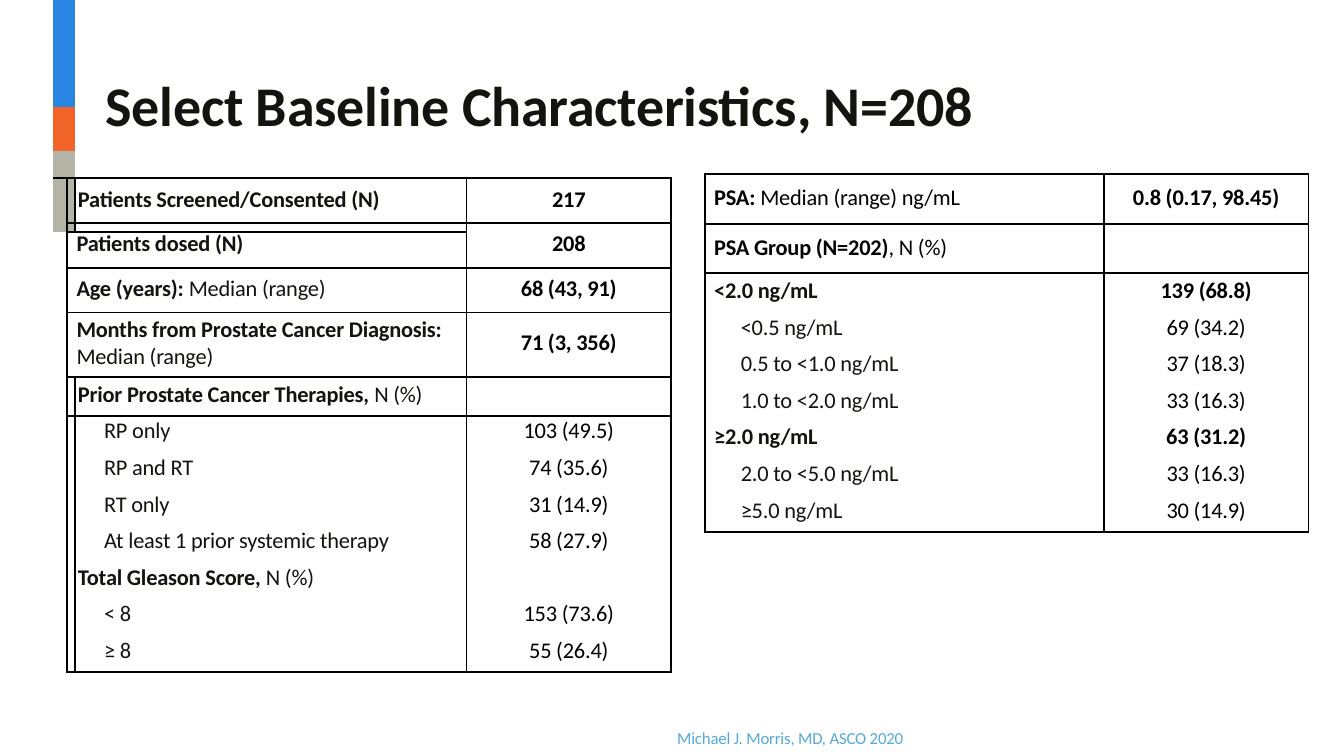
from lxml import etree
from pptx import Presentation
from pptx.dml.color import RGBColor
from pptx.enum.text import PP_ALIGN
from pptx.oxml.ns import qn
from pptx.util import Pt

CENTER = PP_ALIGN.CENTER
FONT = "Calibri"
NO_STYLE = "{2D5ABB26-0587-4C30-8999-92F81FD0307C}"
COLORS = {"ink": "131310", "black": "000000", "credit": "56A9DD",
          "blue": "2985E1", "orange": "F16429", "gray": "B3B3A6"}

HEADER_TOP, BODY_TOP = 4.1, 0.9   # top margins of the table cells
BODY_ROW = 19.6
VALUE_WIDTH = 109.6

# Label, value, top margin; ** switches bold on and off
SCREENED = ("**Patients Screened/Consented (N)**", "**217**")
DOSED = ("**Patients dosed (N)**", "**208**")
MEDIANS = [
    ("**Age (years): **Median (range)", "**68 (43, 91)**", HEADER_TOP, HEADER_TOP),
    ("**Months from Prostate Cancer Diagnosis:**\nMedian (range)",
     "**71 (3, 356)**", 1.9, 9.2),
]
HISTORY = [
    ("**Prior Prostate Cancer Therapies, **N (%)", ""),
    ("RP only", "103 (49.5)"),
    ("RP and RT", "74 (35.6)"),
    ("RT only", "31 (14.9)"),
    ("At least 1 prior systemic therapy", "58 (27.9)"),
    ("**Total Gleason Score, **N (%)", ""),
    ("< 8", "153 (73.6)"),
    ("≥ 8", "55 (26.4)"),
]
PSA = [
    ("**PSA: **Median (range) ng/mL", "**0.8 (0.17, 98.45)**"),
    ("**PSA Group (N=202)**, N (%)", ""),
    ("**<2.0 ng/mL**", "**139 (68.8)**"),
    ("<0.5 ng/mL", "69 (34.2)"),
    ("0.5 to <1.0 ng/mL", "37 (18.3)"),
    ("1.0 to <2.0 ng/mL", "33 (16.3)"),
    ("**≥2.0 ng/mL**", "**63 (31.2)**"),
    ("2.0 to <5.0 ng/mL", "33 (16.3)"),
    ("≥5.0 ng/mL", "30 (14.9)"),
]


def rgb(name):
    return RGBColor.from_string(COLORS[name])


def write(paragraph, marked_text, size, color):
    """Add runs, bold between pairs of **."""
    for index, part in enumerate(marked_text.split("**")):
        if part:
            run = paragraph.add_run()
            run.text = part
            run.font.name = FONT
            run.font.size = Pt(size)
            run.font.bold = index % 2 == 1
            run.font.color.rgb = rgb(color)
            run.font._element.set("spc", "-10")


def add_line_of_text(slide, box, marked_text, size, color, top_margin=0):
    frame = slide.shapes.add_textbox(*map(Pt, box)).text_frame
    frame.word_wrap = True
    frame.margin_left = frame.margin_right = frame.margin_bottom = 0
    frame.margin_top = Pt(top_margin)
    write(frame.paragraphs[0], marked_text, size, color)
    return frame.paragraphs[0]


def add_plain_table(slide, box, widths, heights):
    """Table without style, fills, margins or borders."""
    table = slide.shapes.add_table(len(heights), len(widths), *map(Pt, box)).table
    table.first_row = table.horz_banding = False
    table._tbl.tblPr.find(qn("a:tableStyleId")).text = NO_STYLE
    for column, width in zip(table.columns, widths):
        column.width = Pt(width)
    for row, height in zip(table.rows, heights):
        row.height = Pt(height)
    for cell in table.iter_cells():
        cell.margin_left = cell.margin_right = 0
        cell.margin_top = cell.margin_bottom = 0
        cell.fill.background()
        # keeps empty cells from stretching short rows
        etree.SubElement(cell.text_frame.paragraphs[0]._p,
                         qn("a:endParaRPr")).set("sz", "100")
    return table


def paint(cell, color):
    cell.fill.solid()
    cell.fill.fore_color.rgb = rgb(color)


def rule(cell, sides="LRTB"):
    """Draw 1 pt borders; sides must follow the order L, R, T, B."""
    properties = cell._tc.get_or_add_tcPr()
    for index, side in enumerate(sides):
        line = etree.Element(qn("a:ln" + side), w=str(Pt(1)))
        fill = etree.SubElement(line, qn("a:solidFill"))
        etree.SubElement(fill, qn("a:srgbClr"), val=COLORS["black"])
        properties.insert(index, line)


def fill_label(cell, marked_text, top, indent, color="ink"):
    cell.margin_top, cell.margin_left = Pt(top), Pt(indent)
    frame = cell.text_frame
    for index, line in enumerate(marked_text.split("\n")):
        paragraph = frame.add_paragraph() if index else frame.paragraphs[0]
        write(paragraph, line, 12, color)


def fill_value(cell, marked_text, top):
    cell.margin_top = Pt(top)
    cell.text_frame.paragraphs[0].alignment = CENTER
    write(cell.text_frame.paragraphs[0], marked_text, 12, "black")


def add_patient_table(slide, box):
    """Patient table whose two narrow left columns carry the colour stripe."""
    edge, gutter = 7.6, 4.3
    widths = [edge, gutter, box[2] - edge - gutter - VALUE_WIDTH, VALUE_WIDTH]
    heights = [57.5, 23.5, 14.5, 24, 5, 19, 24, 34.5, 21] + [BODY_ROW] * 7
    table = add_plain_table(slide, box, widths, heights)
    cell = table.cell
    screened, strip, dosed, medians, history = 3, 4, 5, 6, 8
    last = len(heights) - 1

    for row, color in enumerate(("blue", "orange", "gray")):
        cell(row, 0).merge(cell(row, 1))
        paint(cell(row, 0), color)
    rule(cell(2, 0), "B")
    cell(0, 2).merge(cell(2, 3))
    rule(cell(0, 2), "B")
    for row in (screened, strip):
        for column in (0, 1):
            paint(cell(row, column), "gray")
        rule(cell(row, 0), "R")
    rule(cell(screened, 1))
    rule(cell(strip, 1), "LRT")

    fill_label(cell(screened, 2), SCREENED[0], HEADER_TOP, 1.5)
    fill_value(cell(screened, 3), SCREENED[1], HEADER_TOP)
    rule(cell(screened, 2))
    rule(cell(screened, 3))
    rule(cell(strip, 2))

    cell(strip, 3).merge(cell(dosed, 3))
    fill_value(cell(strip, 3), DOSED[1], HEADER_TOP)
    rule(cell(strip, 3))
    cell(dosed, 1).merge(cell(dosed, 2))
    fill_label(cell(dosed, 1), DOSED[0], 0, 5)
    cell(dosed, 1).text_frame.paragraphs[0].line_spacing = Pt(13.6)
    rule(cell(dosed, 1), "LRB")
    rule(cell(dosed, 0), "R")

    for row, (label, value, label_top, value_top) in enumerate(MEDIANS, medians):
        cell(row, 1).merge(cell(row, 2))
        fill_label(cell(row, 1), label, label_top, 5)
        fill_value(cell(row, 3), value, value_top)
        rule(cell(row, 0), "R")
        rule(cell(row, 1))
        rule(cell(row, 3))

    cell(history, 0).merge(cell(last, 0))
    rule(cell(history, 0), "R")
    for row, (label, value) in enumerate(HISTORY, history):
        top = 2.3 if row == history else BODY_TOP
        fill_label(cell(row, 2), label, top, 1.5 if "**" in label else 15.5)
        if value:
            fill_value(cell(row, 3), value, top)
        sides = "LRTB" if row == history else "LRB" if row == last else "LR"
        for column in (1, 2, 3):
            rule(cell(row, column), sides)


def add_psa_table(slide, box):
    heights = [26.7, 26.3, 21.2] + [BODY_ROW] * 6
    table = add_plain_table(slide, box, [box[2] - VALUE_WIDTH, VALUE_WIDTH], heights)
    tops = [5.6, 5.5, 2.6] + [BODY_TOP] * 6
    for row, ((label, value), top) in enumerate(zip(PSA, tops)):
        label_cell, value_cell = table.cell(row, 0), table.cell(row, 1)
        fill_label(label_cell, label, top, 5 if "**" in label else 19.3,
                   "black" if row < 2 else "ink")
        if value:
            fill_value(value_cell, value, top)
        sides = "LRTB" if row < 2 else "LRB" if row == len(PSA) - 1 else "LR"
        rule(label_cell, sides)
        rule(value_cell, sides)


def main():
    deck = Presentation()
    deck.slide_width, deck.slide_height = Pt(720), Pt(405)
    slide = deck.slides.add_slide(deck.slide_layouts[6])
    add_line_of_text(slide, (56.5, 36, 471, 38),
                     "**Select Baseline Characteristics, N=208**", 30, "ink", 1.7)
    credit = add_line_of_text(slide, (362.8, 391, 127, 11),
                              "Michael J. Morris, MD, ASCO 2020", 9, "credit")
    credit.line_spacing = Pt(9.6)
    add_patient_table(slide, (28.4, 0, 331.2, 360.2))
    add_psa_table(slide, (377.6, 93.2, 323.4, 191.8))
    deck.save("out.pptx")


if __name__ == "__main__":
    main()
